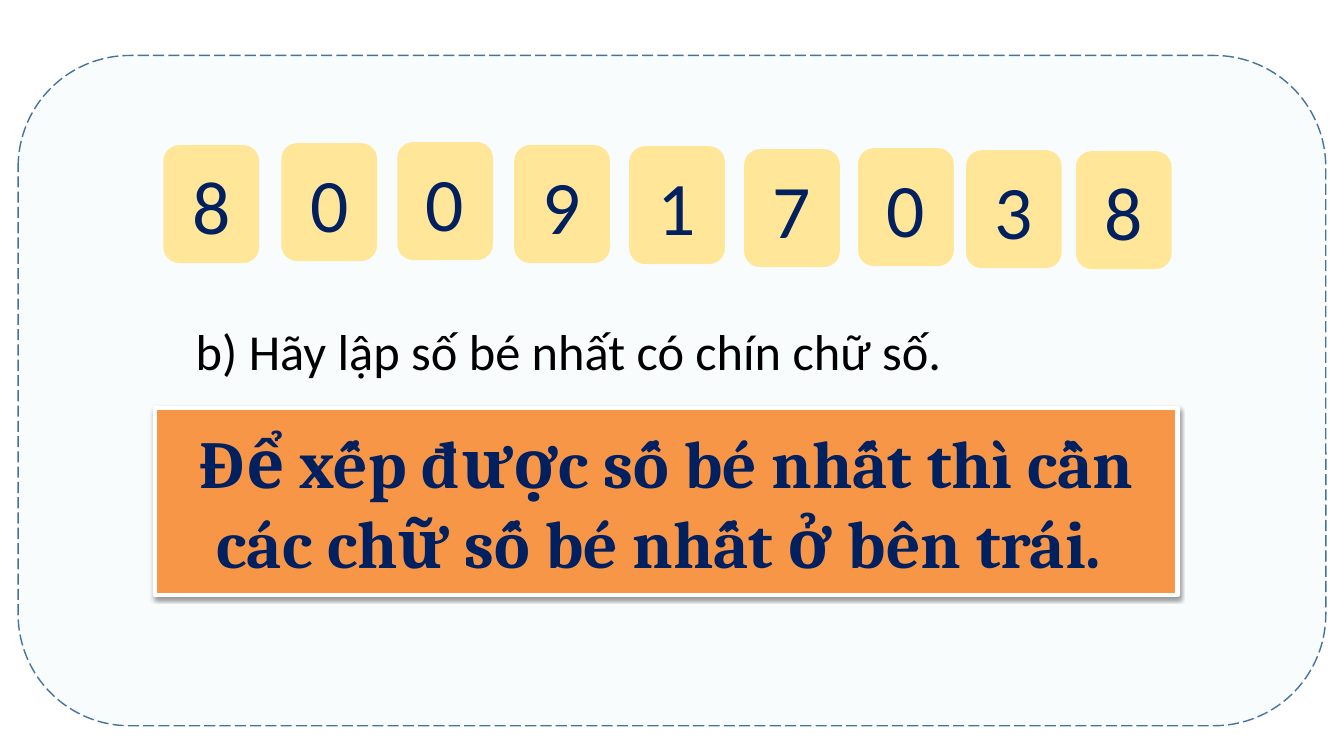
"""Build a maths slide about the smallest nine-digit number."""
from lxml.etree import SubElement as Sub
from pptx import Presentation
from pptx.dml.color import RGBColor
from pptx.enum.dml import MSO_LINE as Dash
from pptx.enum.shapes import MSO_SHAPE as Kind
from pptx.enum.text import MSO_ANCHOR as Anchor, MSO_AUTO_SIZE as Fit, PP_ALIGN as Align
from pptx.oxml.ns import qn
from pptx.util import Inches, Pt

PALE = RGBColor(0xF8, 0xFC, 0xFD)
BLUE = RGBColor(0x43, 0x73, 0x9E)
CREAM = RGBColor(0xFF, 0xE6, 0x99)
NAVY = RGBColor(0x00, 0x20, 0x60)
BLACK = RGBColor(0x00, 0x00, 0x00)
ORANGE = RGBColor(0xF7, 0x96, 0x46)
WHITE = RGBColor(0xFF, 0xFF, 0xFF)

CARDS = [
    ("8", 1.62, 1.44), ("0", 2.79, 1.42), ("0", 3.94, 1.41),
    ("9", 5.1, 1.44), ("1", 6.24, 1.45), ("7", 7.38, 1.48),
    ("0", 8.51, 1.47), ("3", 9.58, 1.49), ("8", 10.67, 1.5),
]


class Deck:
    """Hold the text style and the current slide."""

    body = "Calibri"
    serif = "Cambria"

    def __init__(self):
        """Open a title-only slide."""
        self.prs = Presentation()
        self.prs.slide_width = Inches(13.33)
        self.prs.slide_height = Inches(7.5)
        self.slide = self.prs.slides.add_slide(self.prs.slide_layouts[5])

    def place(self, shape, box):
        """Move a shape to a box in inches."""
        shape.left, shape.top, shape.width, shape.height = map(Inches, box)

    def label(self, shape, text, size, color, font, align=Align.CENTER, bold=False):
        """Set and format the text of a shape."""
        frame = shape.text_frame
        frame.text = text
        frame.word_wrap = True
        frame.vertical_anchor = Anchor.MIDDLE
        line = frame.paragraphs[0]
        line.alignment = align
        style = line.runs[0].font
        style.name, style.size, style.bold = font, Pt(size), bold
        style.color.rgb = color

    def block(self, kind, box, fill, edge=None, width=1):
        """Add a filled shape with an optional outline."""
        shape = self.slide.shapes.add_shape(kind, *map(Inches, box))
        shape.shadow.inherit = False
        shape.fill.solid()
        shape.fill.fore_color.rgb = fill
        if edge is None:
            shape.line.fill.background()
        else:
            shape.line.color.rgb = edge
            shape.line.width = Pt(width)
        return shape

    def panel(self, box):
        """Add the dashed panel behind the title."""
        shape = self.block(Kind.ROUNDED_RECTANGLE, box, PALE, BLUE)
        shape.line.dash_style = Dash.LONG_DASH
        self.slide.shapes.title.element.addprevious(shape.element)

    def card(self, digit, left, top):
        """Add one digit card."""
        shape = self.block(Kind.ROUNDED_RECTANGLE, (left, top, 0.95, 1.17), CREAM)
        self.label(shape, digit, 54, NAVY, self.body)

    def title(self, text, box):
        """Fill the title placeholder with the question."""
        shape = self.slide.shapes.title
        self.place(shape, box)
        self.label(shape, text, 36, BLACK, self.body, Align.JUSTIFY)
        shape.text_frame.vertical_anchor = Anchor.TOP
        shape.text_frame.auto_size = Fit.SHAPE_TO_FIT_TEXT

    def banner(self, text, box):
        """Add the answer banner with its soft shadow."""
        shape = self.block(Kind.RECTANGLE, box, ORANGE, WHITE, 3)
        self.label(shape, text, 48, NAVY, self.serif, bold=True)
        glow = shape.element.spPr.find(qn("a:effectLst"))
        shade = Sub(glow, qn("a:outerShdw"), blurRad=str(Pt(3.1)),
                    dist=str(Pt(1.6)), dir="5400000", rotWithShape="0")
        tint = Sub(shade, qn("a:srgbClr"), val=str(BLACK))
        Sub(tint, qn("a:alpha"), val="38000")


def main():
    """Build and save the slide."""
    deck = Deck()
    deck.panel((0.18, 0.55, 12.97, 6.65))
    for card in CARDS:
        deck.card(*card)
    deck.title("b) Hãy lập số bé nhất có chín chữ số.", (1.84, 3.13, 10.97, 0.71))
    deck.banner("Để xếp được số bé nhất thì cần các chữ số bé nhất ở bên trái. ",
                (1.54, 4.05, 10.14, 1.85))
    deck.prs.save("out.pptx")


if __name__ == "__main__":
    main()
